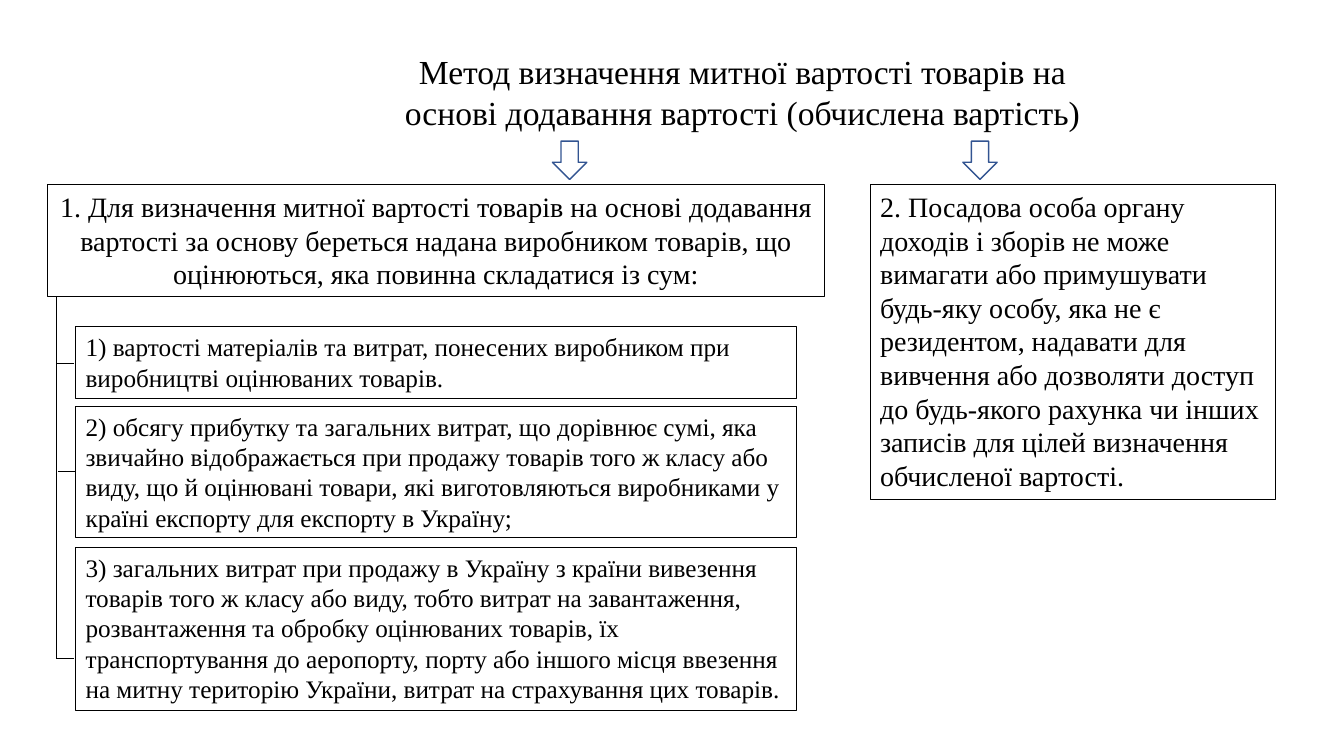
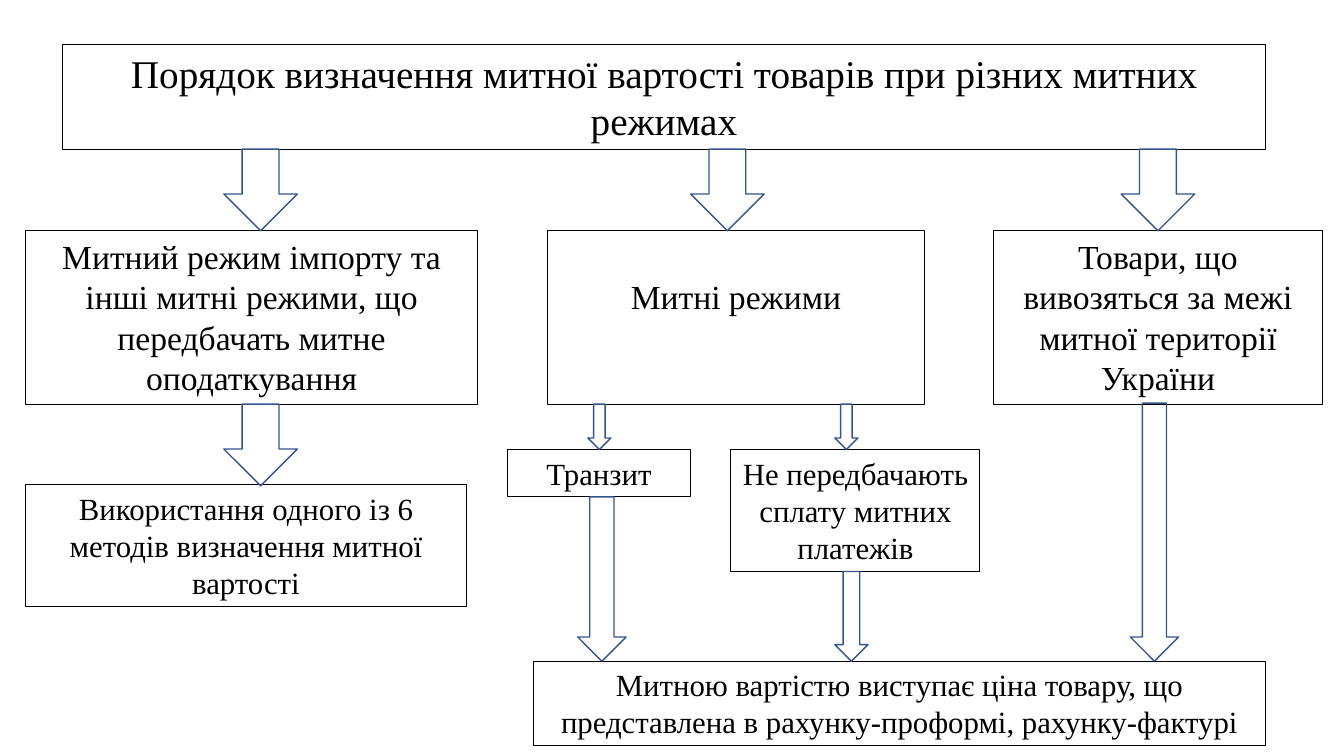
from dataclasses import dataclass

import pptx
import pptx.util
from lxml import etree
from pptx.dml.color import RGBColor
from pptx.enum.shapes import MSO_CONNECTOR, MSO_SHAPE
from pptx.enum.text import MSO_ANCHOR, PP_ALIGN
from pptx.oxml.ns import qn
from pptx.shapes.autoshape import Shape
from pptx.slide import Slide

PX = 9144  # EMU per px, 100 px to the inch
BLACK = RGBColor(0x00, 0x00, 0x00)
BLUE = RGBColor(0x32, 0x54, 0x91)
FONT = "Times New Roman"
LEFT, MID = PP_ALIGN.LEFT, PP_ALIGN.CENTER


@dataclass(frozen=True)
class Box:
    left: int
    top: int
    width: int
    height: int
    text: str
    size: int
    align: PP_ALIGN = MID
    framed: bool = True
    inset: int = 5


@dataclass(frozen=True)
class Arrow:
    left: int
    top: int
    width: int
    height: int


def emu(px: int) -> pptx.util.Emu:
    return pptx.util.Emu(px * PX)


def add_box(slide: Slide, box: Box) -> Shape:
    area = [emu(n) for n in (box.left, box.top, box.width, box.height)]
    if box.framed:
        shape = slide.shapes.add_shape(MSO_SHAPE.RECTANGLE, *area)
        shape.shadow.inherit = False
        shape.fill.background()
        shape.line.color.rgb = BLACK
        shape.line.width = pptx.util.Pt(0.75)
    else:
        shape = slide.shapes.add_textbox(*area)
    frame = shape.text_frame
    frame.word_wrap = True
    frame.vertical_anchor = MSO_ANCHOR.TOP
    frame.margin_top = emu(box.inset)
    para = frame.paragraphs[0]
    para.alignment = box.align
    run = para.add_run()
    run.text = box.text
    run.font.name = FONT
    run.font.size = pptx.util.Pt(box.size)
    run.font.color.rgb = BLACK
    return shape


def add_arrow(slide: Slide, arrow: Arrow) -> None:
    area = [emu(n) for n in (arrow.left, arrow.top, arrow.width, arrow.height)]
    shape = slide.shapes.add_shape(MSO_SHAPE.DOWN_ARROW, *area)
    shape.shadow.inherit = False
    shape.fill.background()
    shape.line.color.rgb = BLUE
    shape.line.width = pptx.util.Pt(1)


def add_line(slide: Slide, x1: int, y1: int, x2: int, y2: int,
             goal: Shape | None = None) -> None:
    """Draw a thin line, joined to the left side of goal if one is given."""
    line = slide.shapes.add_connector(
        MSO_CONNECTOR.STRAIGHT, emu(x1), emu(y1), emu(x2), emu(y2))
    line.line.color.rgb = BLACK
    line.line.width = pptx.util.Pt(0.5)
    etree.SubElement(line._element.spPr, qn("a:effectLst"))
    if goal is not None:
        line.end_connect(goal, 1)


METHOD = [
    Box(376, 46, 721, 91, "Метод визначення митної вартості товарів на основі "
        "додавання вартості (обчислена вартість)", 24, framed=False),
    Box(47, 183, 771, 111, "1. Для визначення митної вартості товарів на основі "
        "додавання вартості за основу береться надана виробником товарів, що "
        "оцінюються, яка повинна складатися із сум:", 20),
    Box(863, 183, 402, 313, "2. Посадова особа органу доходів і зборів не може "
        "вимагати або примушувати будь-яку особу, яка не є резидентом, надавати "
        "для вивчення або дозволяти доступ до будь-якого рахунка чи інших "
        "записів для цілей визначення обчисленої вартості.", 20, LEFT),
]
SUMS = [
    Box(75, 324, 715, 71, "1) вартості матеріалів та витрат, понесених "
        "виробником при виробництві оцінюваних товарів.", 18, LEFT),
    Box(75, 403, 715, 130, "2) обсягу прибутку та загальних витрат, що дорівнює "
        "сумі, яка звичайно відображається при продажу товарів того ж класу або "
        "виду, що й оцінювані товари, які виготовляються виробниками у країні "
        "експорту для експорту в Україну;", 18, LEFT),
    Box(75, 543, 715, 162, "3) загальних витрат при продажу в Україну з країни "
        "вивезення товарів того ж класу або виду, тобто витрат на завантаження, "
        "розвантаження та обробку оцінюваних товарів, їх транспортування до "
        "аеропорту, порту або іншого місця ввезення на митну територію України, "
        "витрат на страхування цих товарів.", 18, LEFT),
]
REGIMES = [
    Box(62, 44, 1193, 104, "Порядок визначення митної вартості товарів при "
        "різних митних режимах", 28),
    Box(25, 229, 449, 172, "Митний режим імпорту та інші митні режими, що "
        "передбачать митне оподаткування", 24),
    Box(543, 229, 374, 172, "Митні режими", 24, inset=45),
    Box(985, 229, 327, 172, "Товари, що вивозяться за межі митної території "
        "України", 24),
    Box(25, 481, 438, 121, "Використання одного із 6 методів визначення митної "
        "вартості", 22),
    Box(503, 446, 182, 47, "Транзит", 22),
    Box(725, 446, 247, 121, "Не передбачають сплату митних платежів", 22),
    Box(529, 656, 726, 84, "Митною вартістю виступає ціна товару, що "
        "представлена в рахунку-проформі, рахунку-фактурі", 22),
]
STEPS = [
    *(Arrow(x, 148, 73, 81) for x in (222, 685, 1112)),
    Arrow(222, 401, 73, 81),
    *(Arrow(x, 401, 23, 45) for x in (583, 828)),
    Arrow(573, 493, 48, 163),
    Arrow(828, 567, 33, 89),
    Arrow(1121, 400, 48, 256),
]


def draw_method(slide: Slide) -> None:
    for box in METHOD:
        add_box(slide, box)
    sums = [add_box(slide, box) for box in SUMS]
    for x in (548, 955):
        add_arrow(slide, Arrow(x, 140, 34, 38))
    add_line(slide, 56, 294, 56, 653)
    add_line(slide, 56, 360, 73, 360)
    add_line(slide, 58, 468, 75, 468, sums[1])
    add_line(slide, 56, 653, 73, 653)


def draw_regimes(slide: Slide) -> None:
    for box in REGIMES:
        add_box(slide, box)
    for step in STEPS:
        add_arrow(slide, step)


def main() -> None:
    deck = pptx.Presentation()
    deck.slide_width, deck.slide_height = emu(1333), emu(750)
    for draw in (draw_method, draw_regimes):
        draw(deck.slides.add_slide(deck.slide_layouts[6]))
    deck.save("out.pptx")


if __name__ == "__main__":
    main()
